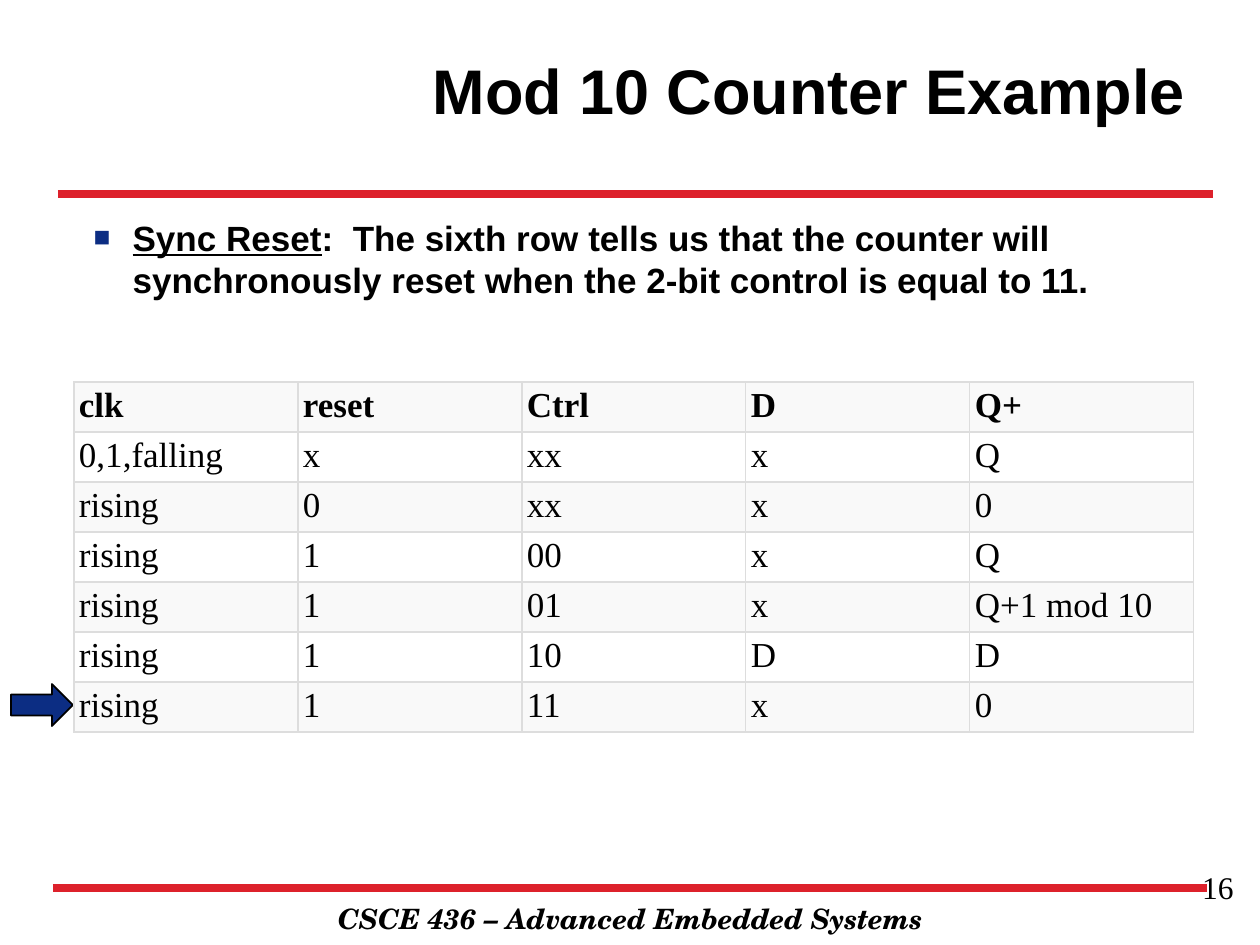
"""Build the slide on the synchronous reset of a mod 10 counter."""
from dataclasses import dataclass

from lxml import etree
from pptx import Presentation
from pptx.dml.color import RGBColor
from pptx.enum.shapes import MSO_CONNECTOR, MSO_SHAPE
from pptx.enum.text import MSO_ANCHOR, MSO_AUTO_SIZE, PP_ALIGN
from pptx.oxml import parse_xml
from pptx.oxml.ns import nsdecls, qn
from pptx.util import Emu, Pt

LEFT, CENTER, RIGHT = PP_ALIGN.LEFT, PP_ALIGN.CENTER, PP_ALIGN.RIGHT
TOP, MIDDLE = MSO_ANCHOR.TOP, MSO_ANCHOR.MIDDLE
NO_FIT, GROW = MSO_AUTO_SIZE.NONE, MSO_AUTO_SIZE.SHAPE_TO_FIT_TEXT
STRAIGHT = MSO_CONNECTOR.STRAIGHT
RIGHT_ARROW = MSO_SHAPE.RIGHT_ARROW
EMU_PER_PX = 914400 / 126


@dataclass(frozen=True)
class Theme:
    ink: str = "000000"
    navy: str = "0C2D83"
    red: str = "DD212B"
    grid: str = "DDDDDD"
    bands: tuple = ("F9F9F9", "FFFFFF")
    sans: str = "Arial"
    serif: str = "Times New Roman"
    school: str = "TeX Gyre Schola"
    title: int = 36
    body: int = 20
    number: int = 18
    footer: int = 16


def px(length):
    return Emu(round(length * EMU_PER_PX))


def set_values(target, values):
    for name, value in values.items():
        setattr(target, name, value)


class SlideBuilder:
    def __init__(self, deck, theme):
        self.theme = theme
        self.slide = deck.slides.add_slide(deck.slide_layouts[1])

    def add_spans(self, para, spans, name, size, **style):
        para.space_before = Pt(0)
        for words, extra in spans:
            span = para.add_run()
            span.text = words
            set_values(span.font, {"name": name, "size": Pt(size), **style, **extra})
            span.font.color.rgb = RGBColor.from_string(self.theme.ink)

    def place(self, box, at, align, anchor=TOP, fit=NO_FIT):
        edges = zip(("left", "top", "width", "height"), map(px, at))
        set_values(box, dict(edges))
        set_values(box.text_frame, {"word_wrap": True, "auto_size": fit,
                                    "vertical_anchor": anchor})
        para = box.text_frame.paragraphs[0]
        para.alignment = align
        return para

    def title(self, at, words):
        para = self.place(self.slide.shapes.title, at, RIGHT, MIDDLE)
        self.add_spans(para, [(words, {})], self.theme.sans, self.theme.title, bold=True)

    def bullet(self, at, spans):
        para = self.place(self.slide.placeholders[1], at, LEFT)
        props = para._p.get_or_add_pPr()
        props.set("marL", str(px(39)))
        props.set("indent", str(-px(39)))
        for mark in (f'<a:buClr {nsdecls("a")}><a:srgbClr val="{self.theme.navy}"/></a:buClr>',
                     f'<a:buSzPct {nsdecls("a")} val="80000"/>',
                     f'<a:buFont {nsdecls("a")} typeface="{self.theme.sans}"/>',
                     f'<a:buChar {nsdecls("a")} char="■"/>'):
            props.append(parse_xml(mark))
        self.add_spans(para, spans, self.theme.sans, self.theme.body, bold=True)

    def text(self, at, words, align, name, size, fit=NO_FIT, **style):
        box = self.slide.shapes.add_textbox(*map(px, at))
        para = self.place(box, at, align, fit=fit)
        self.add_spans(para, [(words, {})], name, size, **style)

    def rule(self, left, right, y):
        line = self.slide.shapes.add_connector(STRAIGHT, px(left), px(y), px(right), px(y))
        line.line.color.rgb = RGBColor.from_string(self.theme.red)
        line.line.width = Pt(4.5)
        etree.SubElement(line._element.spPr, qn("a:effectLst"))

    def arrow(self, at):
        shape = self.slide.shapes.add_shape(RIGHT_ARROW, *map(px, at))
        shape.shadow.inherit = False
        shape.fill.solid()
        shape.fill.fore_color.rgb = RGBColor.from_string(self.theme.navy)
        shape.line.color.rgb = RGBColor.from_string(self.theme.ink)
        shape.line.width = Pt(1)

    def cell(self, cell, words, band, bold):
        margins = {"margin_left": px(5), "margin_right": px(5),
                   "margin_top": px(4), "margin_bottom": px(4)}
        set_values(cell, margins)
        props = cell._tc.get_or_add_tcPr()
        for side in "LRTB":
            props.append(parse_xml(
                f'<a:ln{side} {nsdecls("a")} w="{Pt(0.75)}"><a:solidFill>'
                f'<a:srgbClr val="{self.theme.grid}"/></a:solidFill></a:ln{side}>'))
        cell.fill.solid()
        cell.fill.fore_color.rgb = RGBColor.from_string(band)
        self.add_spans(cell.text_frame.paragraphs[0], [(words, {})],
                       self.theme.serif, self.theme.body, bold=bold)

    def table(self, left, top, column_width, row_height, rows):
        columns = len(rows[0])
        frame = self.slide.shapes.add_table(
            len(rows), columns, px(left), px(top),
            px(column_width * columns), px(row_height * len(rows)))
        table = frame.table
        for column in table.columns:
            column.width = px(column_width)
        for r, row in enumerate(rows):
            table.rows[r].height = px(row_height)
            for c, words in enumerate(row):
                self.cell(table.cell(r, c), words, self.theme.bands[r % 2], r == 0)


def main():
    deck = Presentation()
    deck.slide_width, deck.slide_height = px(1260), px(945)
    theme = Theme()
    page = SlideBuilder(deck, theme)
    page.text((179, 895, 903, 47), "CSCE 436 – Advanced Embedded Systems", CENTER,
              theme.school, theme.footer, GROW, bold=True, italic=True)
    page.rule(53, 1207, 888)
    page.rule(58, 1213, 194)
    page.title((263, 10, 935, 158), "Mod 10 Counter Example")
    page.bullet((81, 210, 1120, 596), [
        ("Sync Reset", {"underline": True}),
        (":  The sixth row tells us that the counter will synchronously reset "
         "when the 2-bit control is equal to 11.", {}),
    ])
    page.text((953, 862, 293, 65), "16", RIGHT, theme.serif, theme.number)
    page.arrow((11, 684, 62, 42))
    page.table(74, 382, 224, 35, [
        ("clk", "reset", "Ctrl", "D", "Q+"),
        ("0,1,falling", "x", "xx", "x", "Q"),
        ("rising", "0", "xx", "x", "0"),
        ("rising", "1", "00", "x", "Q"),
        ("rising", "1", "01", "x", "Q+1 mod 10"),
        ("rising", "1", "10", "D", "D"),
        ("rising", "1", "11", "x", "0"),
    ])
    deck.save("out.pptx")


if __name__ == "__main__":
    main()
